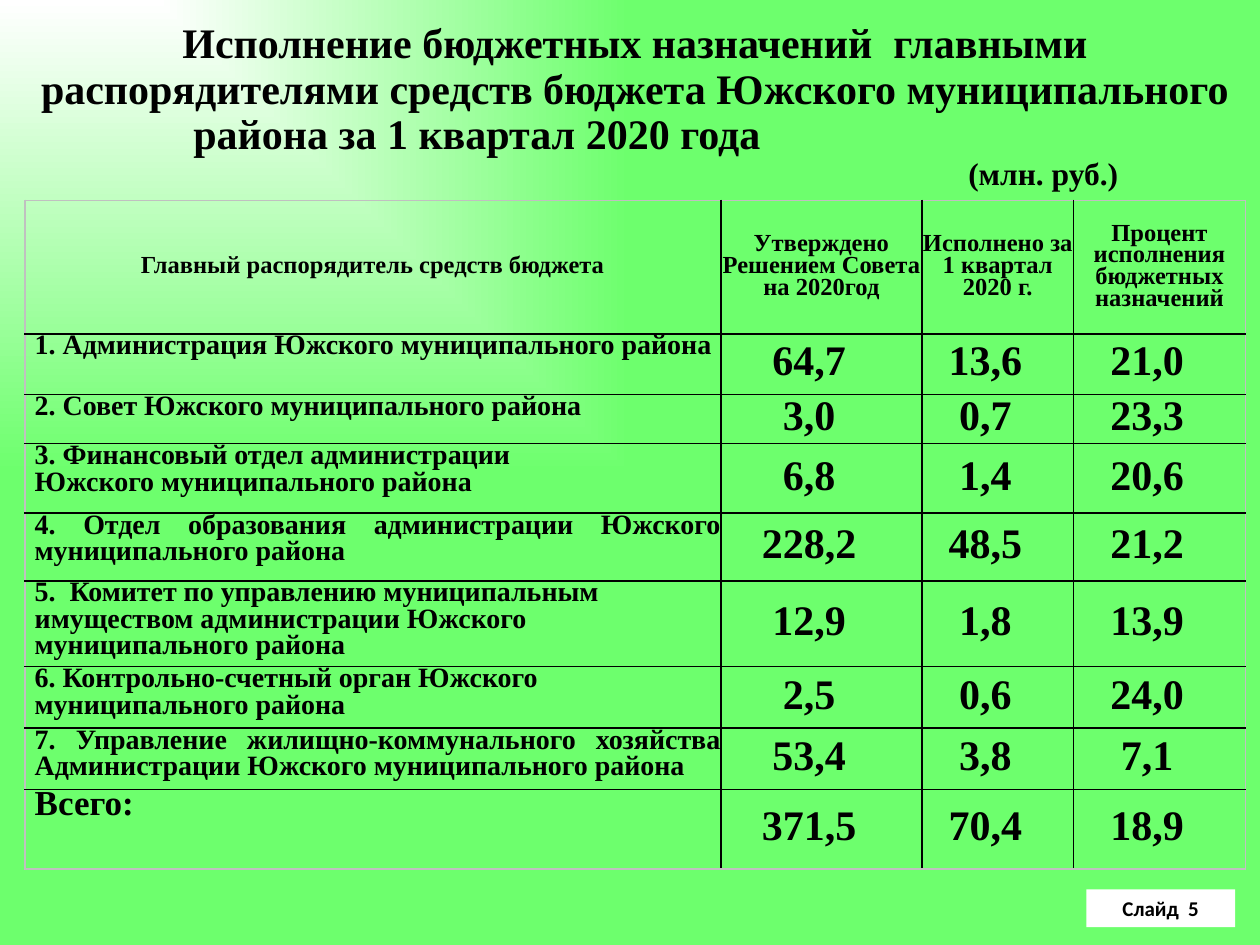
"""Build the slide on budget execution by chief budget managers."""
from lxml import etree
from pptx import Presentation
from pptx.dml.color import RGBColor
from pptx.enum import shapes, text
from pptx.oxml.ns import qn
from pptx.util import Cm, Pt

WHITE = RGBColor(0xFF, 0xFF, 0xFF)
GREEN = RGBColor(0x6D, 0xFF, 0x6D)
BLACK = RGBColor(0, 0, 0)
GREY = RGBColor(0xC0, 0xC0, 0xC0)
SERIF = "Times New Roman"
LEFT, CENTER, JUSTIFY = (text.PP_ALIGN.LEFT, text.PP_ALIGN.CENTER,
                         text.PP_ALIGN.JUSTIFY)

HEADER = ["Главный распорядитель средств бюджета",
          "Утверждено Решением Совета на 2020год",
          "Исполнено за 1 квартал 2020 г.",
          "Процент исполнения бюджетных назначений"]
ROWS = [
    (["1. Администрация Южского муниципального района"],
     JUSTIFY, 16, ["64,7", "13,6", "21,0"]),
    (["2. Совет Южского муниципального района"],
     JUSTIFY, 16, ["3,0", "0,7", "23,3"]),
    (["3. Финансовый отдел администрации", "Южского муниципального района"],
     JUSTIFY, 16, ["6,8", "1,4", "20,6"]),
    (["4. Отдел образования администрации Южского муниципального района"],
     JUSTIFY, 16, ["228,2", "48,5", "21,2"]),
    (["5.  Комитет по управлению муниципальным",
      "имуществом администрации Южского муниципального района"],
     LEFT, 16, ["12,9", "1,8", "13,9"]),
    (["6. Контрольно-счетный орган Южского муниципального района"],
     LEFT, 16, ["2,5", "0,6", "24,0"]),
    (["7. Управление жилищно-коммунального хозяйства "
      "Администрации Южского муниципального района"],
     JUSTIFY, 16, ["53,4", "3,8", "7,1"]),
    (["Всего:"], JUSTIFY, 20, ["371,5", "70,4", "18,9"]),
]
COL_WIDTHS = [14.03, 4.06, 3.05, 3.47]
ROW_HEIGHTS = [2.69, 1.22, 0.99, 1.4, 1.37, 1.24, 1.24, 1.24, 1.6]


def add_background(s):
    """Fill the background with a gradient spreading from the top left."""
    fill = s.background.fill
    fill.gradient()
    for stop, color in zip(fill.gradient_stops, (WHITE, GREEN)):
        stop.color.rgb = color
    grad = next(s.element.iter(qn("a:gradFill")))
    grad.remove(grad.find(qn("a:lin")))
    rect = etree.SubElement(grad, qn("a:path"))
    rect.set("path", "rect")
    etree.SubElement(rect, qn("a:fillToRect"), r="100000", b="100000")


def write(tf, lines, size, align=CENTER, spacing=None, indent=0, font=SERIF):
    """Write bold black paragraphs into a text frame."""
    for i, line in enumerate(lines):
        p = tf.paragraphs[0] if i == 0 else tf.add_paragraph()
        style(p, line, size, align, spacing, indent, font)


def style(p, line, size, align, spacing, indent=0, font=SERIF):
    """Set the text, font and layout of one paragraph."""
    p.text = line
    p.alignment = align
    if spacing:
        p.line_spacing = spacing
    if indent:
        p._p.get_or_add_pPr().set("marL", str(Cm(indent)))
    p.font.name, p.font.size, p.font.bold = font, Pt(size), True
    p.font.color.rgb = BLACK


def add_title(s):
    """Add the title with its unit note."""
    tf = s.shapes.add_textbox(Cm(0.5), Cm(0.33), Cm(24.6), Cm(3.71)).text_frame
    tf.word_wrap = True
    write(tf, ["Исполнение бюджетных назначений  главными "
               "распорядителями средств бюджета Южского муниципального"],
          24, spacing=0.9)
    style(tf.add_paragraph(), "района за 1 квартал 2020 года",
          24, LEFT, 0.9, 3.15)
    style(tf.add_paragraph(), "(млн. руб.)", 18, LEFT, 0.9, 18.77)


def set_borders(cell, colors):
    """Draw the left, right, top and bottom cell borders."""
    tc_pr = cell._tc.get_or_add_tcPr()
    for side, color in zip("LRTB", colors):
        ln = etree.SubElement(tc_pr, qn(f"a:ln{side}"), w=str(Pt(1)))
        fill = etree.SubElement(ln, qn("a:solidFill"))
        etree.SubElement(fill, qn("a:srgbClr"), val=str(color))


def fill_cell(cell, lines, size, align=CENTER, spacing=0.85, indent=0,
              right=0, anchor=text.MSO_ANCHOR.MIDDLE):
    """Write a transparent table cell."""
    cell.fill.background()
    cell.margin_left = cell.margin_top = cell.margin_bottom = 0
    cell.margin_right = Cm(right)
    cell.vertical_anchor = anchor
    write(cell.text_frame, lines, size, align, spacing, indent)


def add_budget_table(s):
    """Add the table of approved and executed amounts."""
    n_rows, n_cols = len(ROW_HEIGHTS), len(COL_WIDTHS)
    table = s.shapes.add_table(n_rows, n_cols, Cm(0.5), Cm(4.04),
                               Cm(sum(COL_WIDTHS)), Cm(sum(ROW_HEIGHTS))).table
    table.first_row = table.horz_banding = False
    for col, width in zip(table.columns, COL_WIDTHS):
        col.width = Cm(width)
    for row, height in zip(table.rows, ROW_HEIGHTS):
        row.height = Cm(height)
    for r in range(n_rows):
        for c in range(n_cols):
            outer = (c == 0, c == n_cols - 1, r == 0, r == n_rows - 1)
            set_borders(table.cell(r, c), [GREY if o else BLACK for o in outer])
    for c, label in enumerate(HEADER):
        fill_cell(table.cell(0, c), [label], 14, spacing=0.8)
    for r, (lines, align, size, values) in enumerate(ROWS, 1):
        fill_cell(table.cell(r, 0), lines, size, align, indent=0.2,
                  anchor=text.MSO_ANCHOR.TOP)
        for c, value in enumerate(values, 1):
            fill_cell(table.cell(r, c), [value], 24, right=0.5)


def add_slide_label(s):
    """Add the white slide number label."""
    sp = s.shapes.add_shape(shapes.MSO_SHAPE.RECTANGLE,
                            Cm(21.9), Cm(17.93), Cm(3), Cm(0.76))
    sp.shadow.inherit = False
    sp.fill.solid()
    sp.fill.fore_color.rgb = WHITE
    sp.line.fill.background()
    write(sp.text_frame, ["Слайд  5"], 12, font="Calibri")


def main():
    """Build and save the presentation."""
    prs = Presentation()
    prs.slide_width, prs.slide_height = Cm(25.4), Cm(19.05)
    s = prs.slides.add_slide(prs.slide_layouts[6])
    add_background(s)
    add_slide_label(s)
    add_title(s)
    add_budget_table(s)
    prs.save("out.pptx")


if __name__ == "__main__":
    main()
